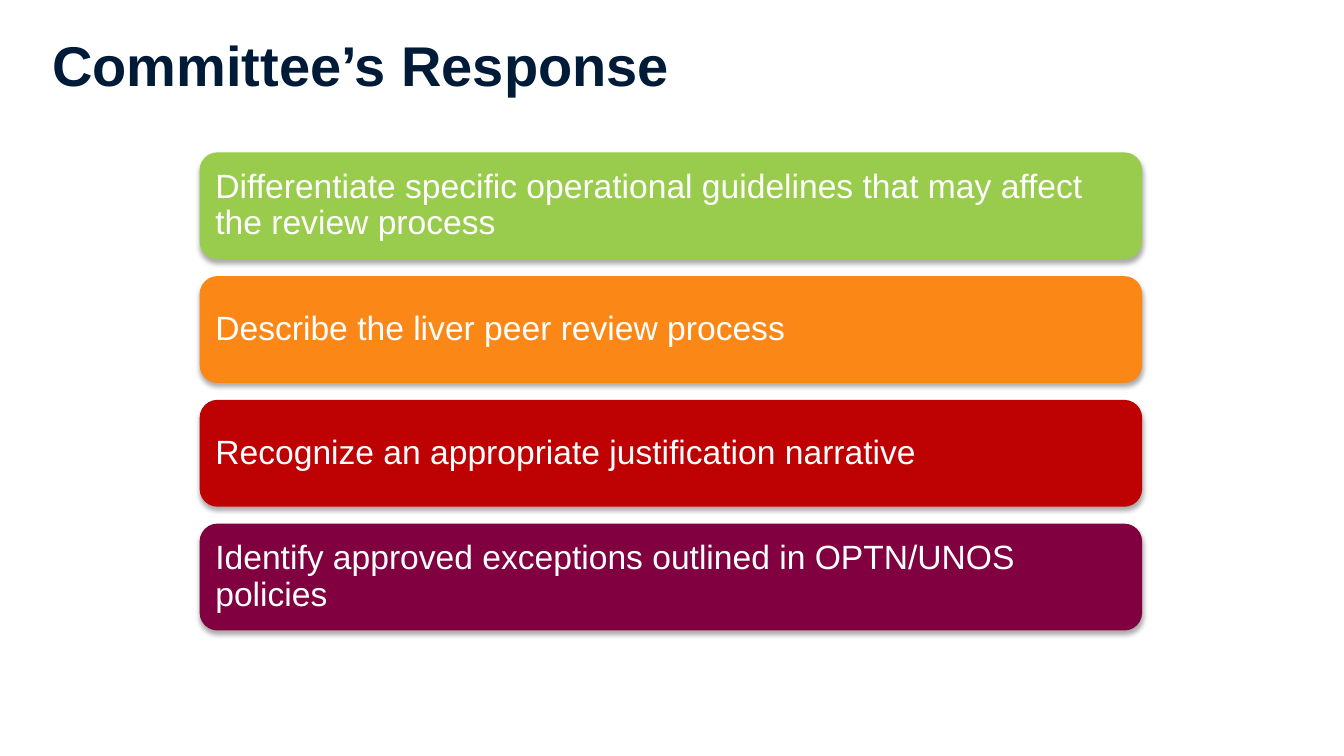
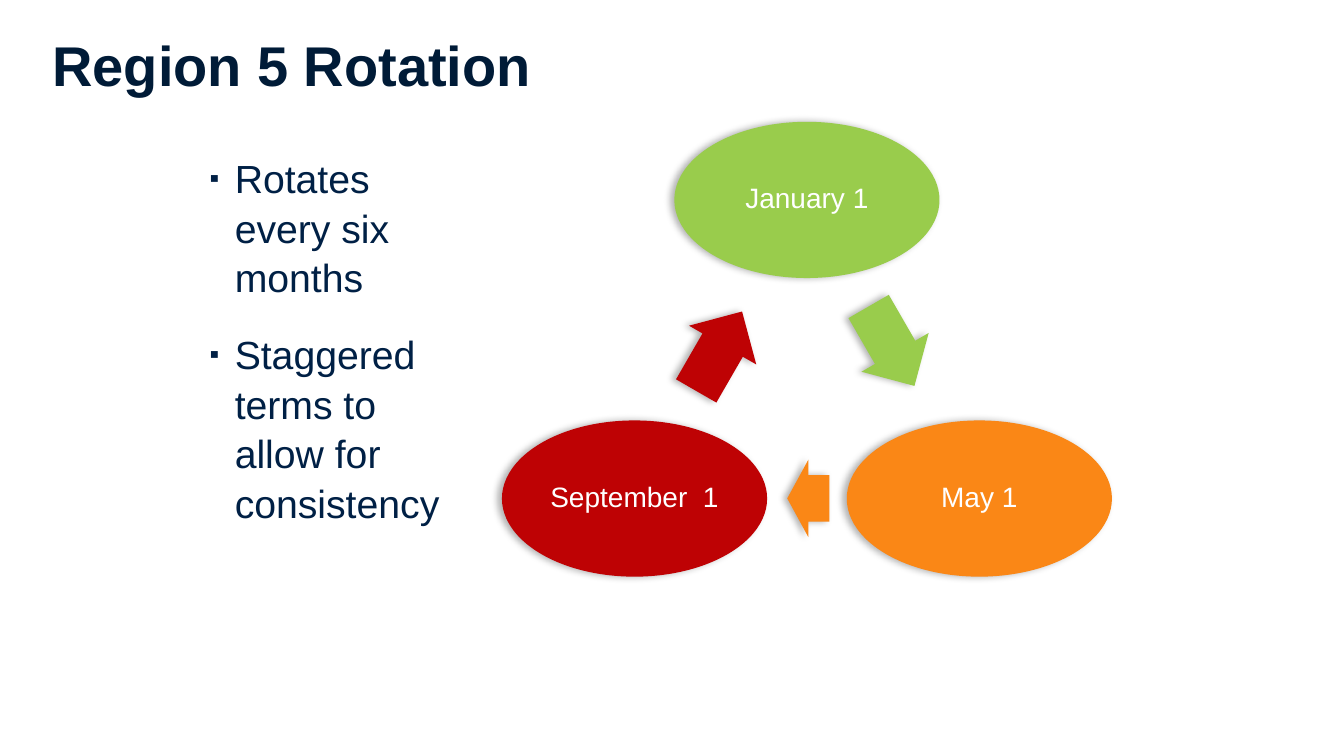
"""Build two slides: response cards and a rotation cycle."""
from math import cos, radians, sin

from lxml.etree import SubElement
from pptx import Presentation
from pptx.dml.color import RGBColor
from pptx.enum.shapes import MSO_SHAPE as Kind
from pptx.enum.text import MSO_ANCHOR as Anchor, PP_ALIGN as Align
from pptx.oxml.ns import qn
from pptx.util import Pt

FONT = "Arial"
NAVY, INK, WHITE = "001B37", "002045", "FFFFFF"
GREEN, ORANGE, RED, PLUM = "99CC4C", "FA8716", "BE0204", "800040"
CONTENT_LEFT = 142.6


def write(para, text, size, color=WHITE, bold=False, align=Align.LEFT, spacing=0.9, before=0):
    para.alignment = align
    para.line_spacing = spacing
    para.space_before = Pt(before)
    span = para.add_run()
    span.text = text
    span.font.name = FONT
    span.font.size = Pt(size)
    span.font.bold = bold
    span.font.color.rgb = RGBColor.from_string(color)


def add_shadowed(page, kind, center, size, color, shadow):
    (x, y), (width, height) = center, size
    shape = page.shapes.add_shape(
        kind, Pt(x - width / 2), Pt(y - height / 2), Pt(width), Pt(height))
    shape.fill.solid()
    shape.fill.fore_color.rgb = RGBColor.from_string(color)
    shape.line.fill.background()
    shape.shadow.inherit = False
    blur, distance, angle, opacity = shadow
    effects = shape.element.spPr.find(qn("a:effectLst"))
    outer = SubElement(effects, qn("a:outerShdw"), blurRad=str(Pt(blur)), dist=str(Pt(distance)),
                       dir=str(angle * 60000), rotWithShape="0")
    black = SubElement(outer, qn("a:srgbClr"), val="000000")
    SubElement(black, qn("a:alpha"), val=str(opacity * 1000))
    frame = shape.text_frame
    frame.word_wrap = True
    frame.vertical_anchor = Anchor.MIDDLE
    return shape


deck = Presentation()
deck.slide_width, deck.slide_height = Pt(960), Pt(540)

pages = []
for heading in ("Committee’s Response", "Region 5 Rotation"):
    page = deck.slides.add_slide(deck.slide_layouts[5])
    title = page.shapes.title
    title.left, title.top, title.width, title.height = Pt(30.2), Pt(12.2), Pt(918), Pt(67)
    title.text_frame.vertical_anchor = Anchor.MIDDLE
    write(title.text_frame.paragraphs[0], heading, 40, color=NAVY, bold=True, spacing=1.0)
    pages.append(page)
response_page, rotation_page = pages

cards = [
    ("Differentiate specific operational guidelines that may affect the review process", GREEN),
    ("Describe the liver peer review process", ORANGE),
    ("Recognize an appropriate justification narrative", RED),
    ("Identify approved exceptions outlined in OPTN/UNOS policies", PLUM),
]
card_width, card_height, card_pitch = 673.2, 76.3, 88.4
for row, (text, color) in enumerate(cards):
    center = (CONTENT_LEFT + card_width / 2, 147 + row * card_pitch)
    card = add_shadowed(response_page, Kind.ROUNDED_RECTANGLE, center,
                        (card_width, card_height), color, (3.5, 2.2, 90, 32))
    card.text_frame.margin_left = card.text_frame.margin_right = Pt(7.5)
    write(card.text_frame.paragraphs[0], text, 24)

cycle_x, cycle_y, cycle_radius = 576.4, 285, 142.2
cycle_shadow = (5, 3, 180, 30)
stages = [
    ("January 1", GREEN, (636.8, 247.3), 65.5),
    ("May 1", ORANGE, (577.4, 356), 30.2),
    ("September  1", RED, (513.7, 250.9), 65.5),
]
for step, (text, color, arrow_center, arrow_length) in enumerate(stages):
    angle = radians(120 * step - 90)
    center = (cycle_x + cycle_radius * cos(angle), cycle_y + cycle_radius * sin(angle))
    stage = add_shadowed(rotation_page, Kind.OVAL, center, (189.4, 111.6), color, cycle_shadow)
    frame = stage.text_frame
    frame.margin_left = frame.margin_right = frame.margin_top = frame.margin_bottom = Pt(2)
    write(frame.paragraphs[0], text, 20, align=Align.CENTER)
    arrow = add_shadowed(rotation_page, Kind.RIGHT_ARROW, arrow_center,
                         (arrow_length, 55.4), color, cycle_shadow)
    arrow.adjustments[0], arrow.adjustments[1] = 0.6, 0.5
    arrow.rotation = 60 + 120 * step

box = rotation_page.shapes.add_textbox(Pt(CONTENT_LEFT), Pt(105.1), Pt(187.9), Pt(347))
box.text_frame.word_wrap = True
points = ("Rotates every six months", "Staggered terms to allow for consistency")
for index, text in enumerate(points):
    para = box.text_frame.add_paragraph() if index else box.text_frame.paragraphs[0]
    write(para, text, 28, color=INK, spacing=1.05, before=20 if index else 0)
    props = para._p.get_or_add_pPr()
    props.set("marL", str(Pt(18)))
    props.set("indent", str(Pt(-18)))
    SubElement(SubElement(props, qn("a:buClr")), qn("a:srgbClr"), val=INK)
    SubElement(props, qn("a:buSzPct"), val="70000")
    SubElement(props, qn("a:buFont"), typeface=FONT)
    SubElement(props, qn("a:buChar"), char="▪")

deck.save("out.pptx")
